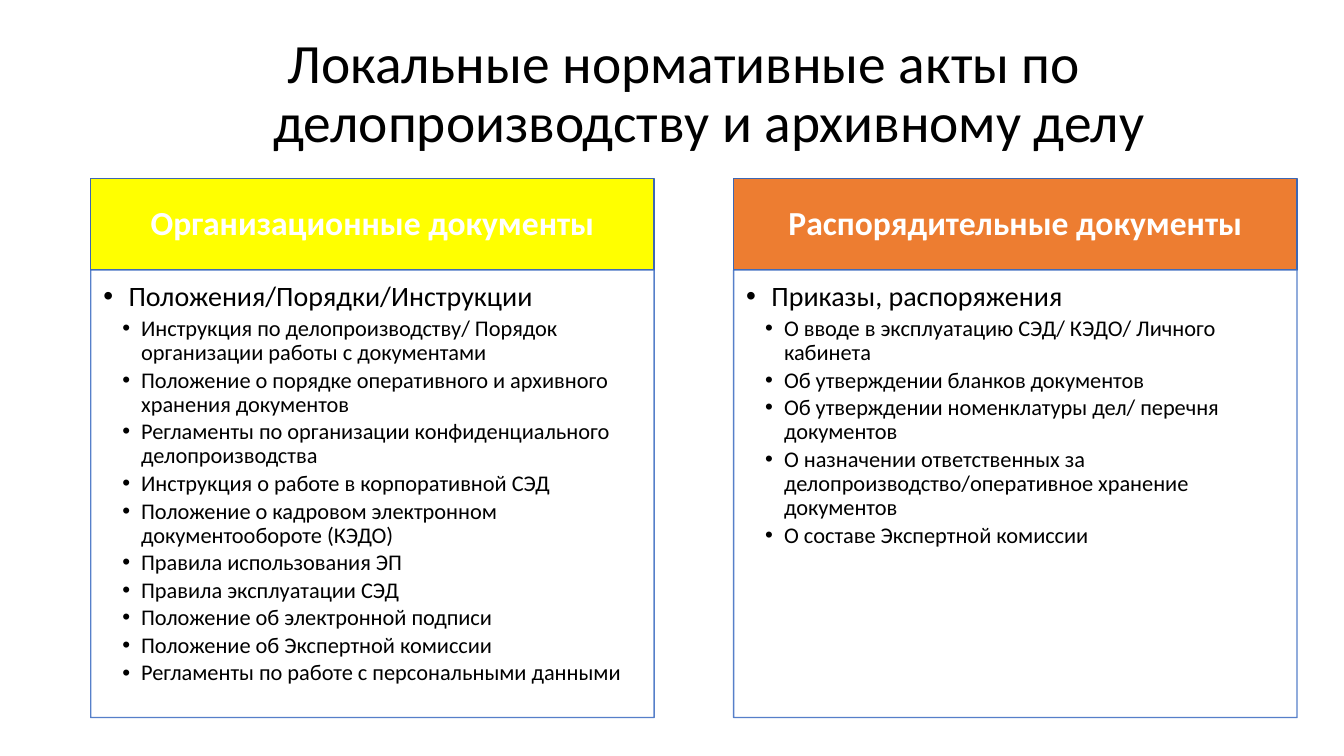
import pptx
import pptx.dml.color
import pptx.enum.shapes
import pptx.enum.text
import pptx.oxml.ns
import pptx.util
from lxml import etree

Pt = pptx.util.Pt
Align = pptx.enum.text.PP_ALIGN
Anchor = pptx.enum.text.MSO_ANCHOR
qn = pptx.oxml.ns.qn

FONT = "Calibri"
COLORS = {
    "text": "000000",
    "white": "FFFFFF",
    "yellow": "FFFF00",
    "orange": "ED7D31",
    "header_line": "3E67B2",
    "body_line": "4472C4",
}
TITLE = "Локальные нормативные акты по делопроизводству и архивному делу"
COLUMNS = [
    ("Организационные документы", "yellow", "Положения/Порядки/Инструкции", [
        "Инструкция по делопроизводству/ Порядок организации работы с документами",
        "Положение о порядке оперативного и архивного хранения документов",
        "Регламенты по организации конфиденциального делопроизводства",
        "Инструкция о работе в корпоративной СЭД",
        "Положение о кадровом электронном документообороте (КЭДО)",
        "Правила использования ЭП",
        "Правила эксплуатации СЭД",
        "Положение об электронной подписи",
        "Положение об Экспертной комиссии",
        "Регламенты по работе с персональными данными",
    ]),
    ("Распорядительные документы", "orange", "Приказы, распоряжения", [
        "О вводе в эксплуатацию СЭД/ КЭДО/ Личного кабинета",
        "Об утверждении бланков документов",
        "Об утверждении номенклатуры дел/ перечня документов",
        "О назначении ответственных за делопроизводство/оперативное хранение документов",
        "О составе Экспертной комиссии",
    ]),
]


def rgb(name):
    return pptx.dml.color.RGBColor.from_string(COLORS[name])


def set_frame(shape, margins, anchor=Anchor.TOP):
    frame = shape.text_frame
    frame.word_wrap = True
    frame.vertical_anchor = anchor
    (frame.margin_left, frame.margin_top,
     frame.margin_right, frame.margin_bottom) = map(Pt, margins)
    return frame


def set_paragraph(paragraph, text, size, color="text", align=Align.LEFT,
                  bold=False, indent=(0, 0)):
    paragraph.text = text
    paragraph.alignment = align
    paragraph.line_spacing = 0.9
    properties = paragraph._p.get_or_add_pPr()
    properties.set("marL", str(Pt(indent[0])))
    properties.set("indent", str(Pt(indent[1])))
    paragraph.font.name = FONT
    paragraph.font.size = Pt(size)
    paragraph.font.bold = bold
    paragraph.font.color.rgb = rgb(color)


def add_bullet(paragraph):
    properties = paragraph._p.get_or_add_pPr()
    etree.SubElement(properties, qn("a:buFont")).set("typeface", "Arial")
    etree.SubElement(properties, qn("a:buChar")).set("char", "•")


def add_box(slide, box, fill, line):
    shape = slide.shapes.add_shape(
        pptx.enum.shapes.MSO_SHAPE.RECTANGLE, *map(Pt, box))
    shape.shadow.inherit = False
    shape.fill.solid()
    shape.fill.fore_color.rgb = rgb(fill)
    shape.line.color.rgb = rgb(line)
    shape.line.width = Pt(1)
    return shape


def set_opacity(shape, percent):
    for color in shape._element.spPr.iter(qn("a:srgbClr")):
        etree.SubElement(color, qn("a:alpha")).set("val", str(percent * 1000))


def add_title(slide, box):
    frame = set_frame(slide.shapes.add_textbox(*map(Pt, box)), (7.2, 3.6, 7.2, 3.6))
    set_paragraph(frame.paragraphs[0], TITLE, 39.6, align=Align.CENTER,
                  indent=(36, -36))


def add_column(slide, box, heading, fill, lead, items):
    left, top, width, height = box
    header_height = 65.5

    # Coloured heading
    header = add_box(slide, (left, top, width, header_height), fill, "header_line")
    frame = set_frame(header, (13.5, 7.7, 13.5, 7.7), Anchor.MIDDLE)
    set_paragraph(frame.paragraphs[0], heading, 24, "white", Align.CENTER, True)

    # Bulleted list
    body = add_box(slide, (left, top + header_height, width, height - header_height),
                   "white", "body_line")
    set_opacity(body, 90)
    frame = set_frame(body, (9, 9, 12, 12.5))
    for index, text in enumerate([lead] + items):
        paragraph = frame.add_paragraph() if index else frame.paragraphs[0]
        size, level, indent = (16, 2, (27, -13.5)) if index else (20, 1, (18, -18))
        paragraph.level = level
        paragraph.space_before = Pt(0)
        paragraph.line_spacing = 0.9
        paragraph.space_after = Pt(size * 0.15)
        add_bullet(paragraph)
        set_paragraph(paragraph, text, size, indent=indent)


def main():
    presentation = pptx.Presentation()
    presentation.slide_width, presentation.slide_height = Pt(960), Pt(540)
    slide = presentation.slides.add_slide(presentation.slide_layouts[6])

    # Title
    add_title(slide, (121, 21.6, 735, 102.2))

    # Two document groups
    for index, column in enumerate(COLUMNS):
        add_column(slide, (64.8 + index * 459.2, 127.4, 402.5, 385.2), *column)

    presentation.save("out.pptx")


if __name__ == "__main__":
    main()
